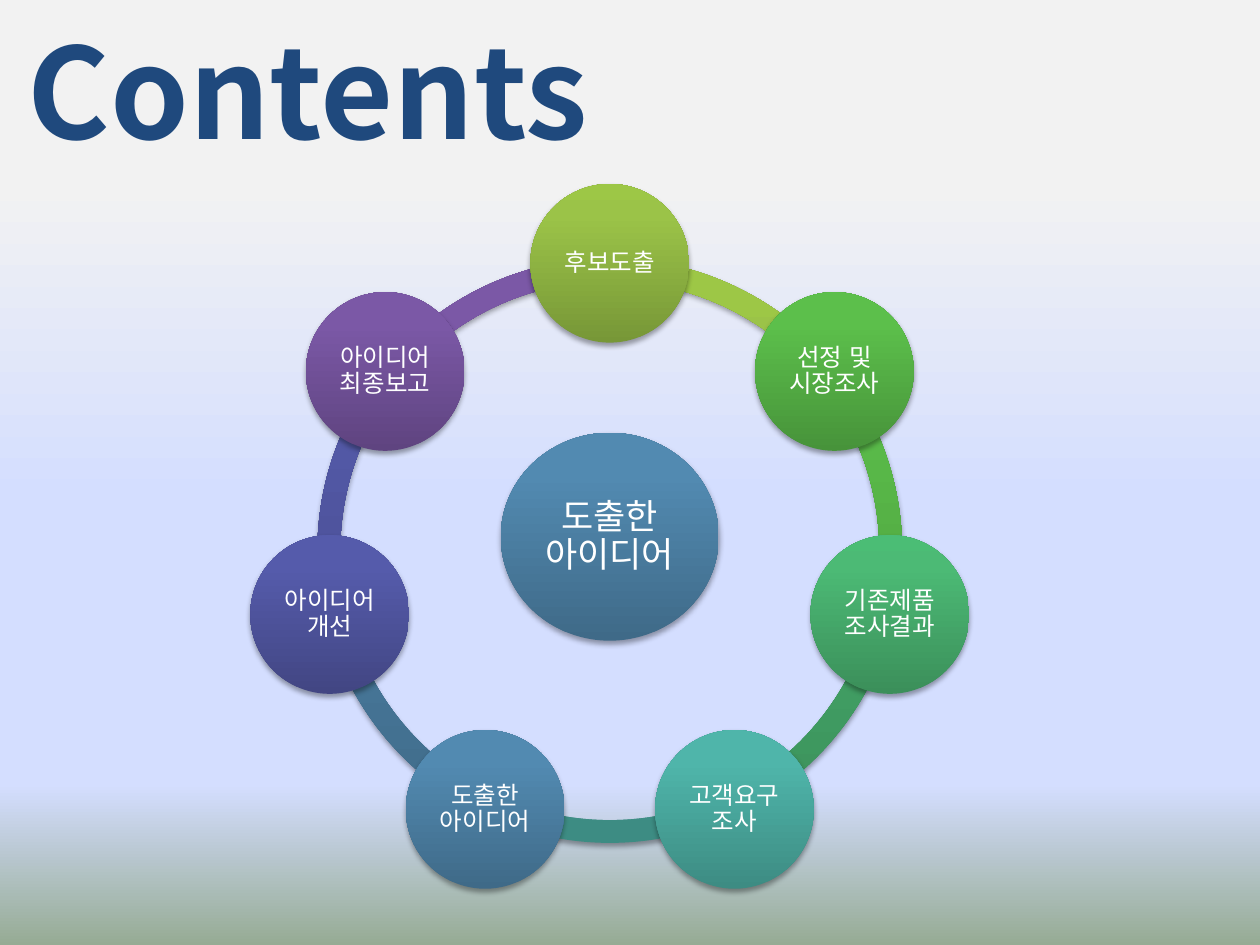
from dataclasses import dataclass
from math import cos, radians, sin

from lxml.etree import SubElement
from pptx import Presentation
from pptx.dml.color import RGBColor
from pptx.enum.lang import MSO_LANGUAGE_ID
from pptx.enum.shapes import MSO_SHAPE
from pptx.enum.text import MSO_ANCHOR, MSO_AUTO_SIZE, PP_ALIGN
from pptx.oxml.ns import qn
from pptx.util import Inches, Pt


@dataclass(frozen=True)
class Theme:
    font: str = "Noto Sans CJK KR"
    title_color: str = "1F497D"
    node_text: str = "FFFFFF"
    shadow: str = "000000"
    title_size: int = 72
    hub_size: int = 20
    node_size: int = 14
    line_spacing: float = 0.9
    background: tuple = ((19, "F2F2F2"), (53, "D4DEFF"), (83, "D4DEFF"), (100, "96AB94"))
    lime: tuple = ((0, "779737"), (80, "9BC348"), (100, "9DC746"))
    green: tuple = ((0, "47933A"), (80, "5CBF4B"), (100, "5BC249"))
    emerald: tuple = ((0, "3B8F5A"), (80, "4CBA75"), (100, "4BBD75"))
    teal: tuple = ((0, "3D8C83"), (80, "4FB5AA"), (100, "4EB8AC"))
    blue: tuple = ((0, "3F6A88"), (80, "528AB1"), (100, "518AB3"))
    indigo: tuple = ((0, "424683"), (80, "555BAB"), (100, "545AAD"))
    purple: tuple = ((0, "5F4480"), (80, "7B58A6"), (100, "7C57A8"))


THEME = Theme()
STEPS = (
    ("후보도출", THEME.lime),
    ("선정 및 시장조사", THEME.green),
    ("기존제품조사결과", THEME.emerald),
    ("고객요구조사", THEME.teal),
    ("도출한 아이디어", THEME.blue),
    ("아이디어 개선", THEME.indigo),
    ("아이디어 최종보고", THEME.purple),
)


def set_gradient(fill, element, stops, angle):
    """Fill with any number of stops; the angle runs counter-clockwise."""
    fill.gradient()
    fill.gradient_angle = angle
    stop_list = element.find(".//" + qn("a:gsLst"))
    stop_list.clear()
    for percent, color in stops:
        stop = SubElement(stop_list, qn("a:gs"), pos=str(percent * 1000))
        SubElement(stop, qn("a:srgbClr"), val=color)


def add_shadow(shape):
    shape.shadow.inherit = False
    effects = shape._element.spPr.find(qn("a:effectLst"))
    shadow = SubElement(effects, qn("a:outerShdw"), blurRad=str(Pt(3.1)),
                        dist=str(Pt(1.8)), dir="5400000", rotWithShape="0")
    color = SubElement(shadow, qn("a:srgbClr"), val=THEME.shadow)
    SubElement(color, qn("a:alpha"), val="35000")


def add_shaded_shape(page, kind, box, stops):
    shape = page.shapes.add_shape(kind, *(Inches(length) for length in box))
    set_gradient(shape.fill, shape._element, stops, 90)
    shape.line.fill.background()
    add_shadow(shape)
    return shape


def write_text(frame, text, size, color, bold=False):
    frame.word_wrap = True
    frame.text = text
    para = frame.paragraphs[0]
    para.line_spacing = THEME.line_spacing
    span = para.runs[0]
    span.font.name = THEME.font
    span.font.size = Pt(size)
    span.font.bold = bold
    span.font.color.rgb = RGBColor.from_string(color)
    span.font.language_id = MSO_LANGUAGE_ID.KOREAN
    SubElement(span.font._element, qn("a:ea"), typeface=THEME.font)


def add_title(page, box):
    title = page.shapes.add_textbox(*(Inches(length) for length in box))
    write_text(title.text_frame, "Contents", THEME.title_size, THEME.title_color, bold=True)
    title.text_frame.auto_size = MSO_AUTO_SIZE.SHAPE_TO_FIT_TEXT


def add_circle(page, center, width, height, text, size, stops):
    box = (center[0] - width / 2, center[1] - height / 2, width, height)
    circle = add_shaded_shape(page, MSO_SHAPE.OVAL, box, stops)
    frame = circle.text_frame
    write_text(frame, text, size, THEME.node_text)
    frame.vertical_anchor = MSO_ANCHOR.MIDDLE
    frame.margin_left = frame.margin_right = Inches(0.02)
    frame.margin_top = frame.margin_bottom = 0
    frame.paragraphs[0].alignment = PP_ALIGN.CENTER


def add_cycle(page, box):
    """Place a ring of arcs, a circle at each joint and a hub in the middle."""
    left, top, width, height = box
    center_x, center_y = left + width / 2, top + height / 2
    orbit = width / 2 - 0.04
    step = 360 / len(STEPS)
    angles = [270 + step * index for index in range(len(STEPS))]

    for angle, (_, stops) in reversed(list(zip(angles, STEPS))):
        arc = add_shaded_shape(page, MSO_SHAPE.BLOCK_ARC, box, stops)
        # Angle adjustments count 60000 units per degree, scaled by 100000.
        arc.adjustments[0] = angle % 360 * 0.6
        arc.adjustments[1] = (angle + step) % 360 * 0.6
        arc.adjustments[2] = 0.039

    for angle, (text, stops) in zip(angles, STEPS):
        center = (center_x + orbit * cos(radians(angle)),
                  center_y + orbit * sin(radians(angle)))
        add_circle(page, center, 1.26, 1.26, text, THEME.node_size, stops)

    add_circle(page, (center_x, center_y - 0.11), 1.73, 1.65,
               "도출한 아이디어", THEME.hub_size, THEME.blue)


def main():
    deck = Presentation()
    deck.slide_width, deck.slide_height = Inches(10), Inches(7.5)
    page = deck.slides.add_slide(deck.slide_layouts[6])
    set_gradient(page.background.fill, page._element, THEME.background, 270)
    add_title(page, (0.12, 0.19, 7.24, 1.99))
    add_cycle(page, (2.52, 2.05, 4.64, 4.64))
    deck.save("out.pptx")


if __name__ == "__main__":
    main()
